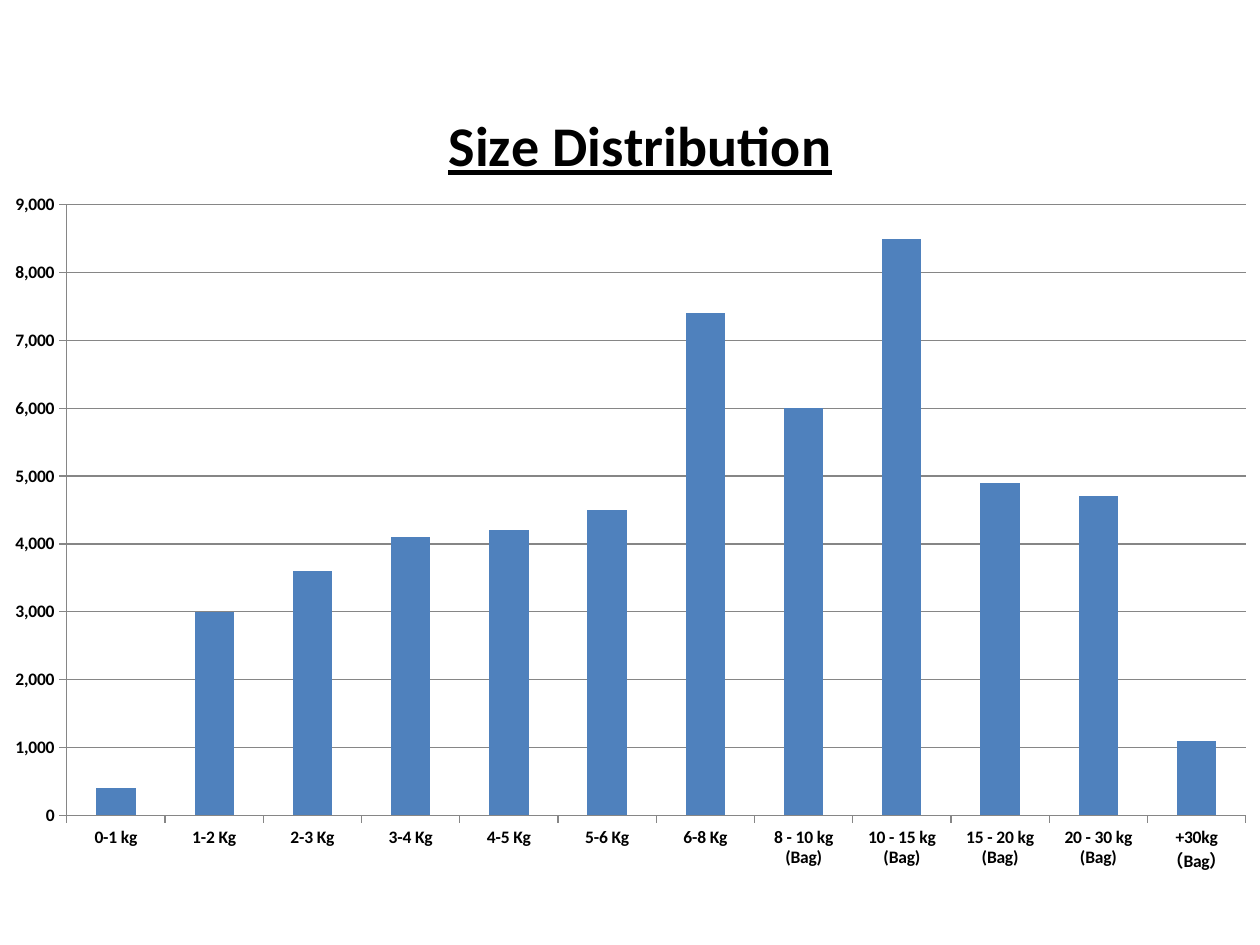
"""Build a slide with a column chart of the size distribution."""
import pptx
import pptx.chart.data
import pptx.dml.color
import pptx.enum.chart
import pptx.oxml
import pptx.oxml.ns
import pptx.util

Pt = pptx.util.Pt
COLORS = {name: pptx.dml.color.RGBColor.from_string(value) for name, value in
          {"text": "000000", "bar": "4F81BD", "line": "868686"}.items()}
NUMBER_FORMAT = '#,##0;"△ "#,##0'
SIZES = {
    "0-1 kg": 400,
    "1-2 Kg": 3000,
    "2-3 Kg": 3600,
    "3-4 Kg": 4100,
    "4-5 Kg": 4200,
    "5-6 Kg": 4500,
    "6-8 Kg": 7400,
    "8 - 10 kg (Bag)": 6000,
    "10 - 15 kg (Bag)": 8500,
    "15 - 20 kg (Bag)": 4900,
    "20 - 30 kg (Bag)": 4700,
    "+30kg（Bag）": 1100,
}


def make_layout(target, **fractions):
    """Return a manual chart layout with the given fractions of the chart."""
    inner = '<c:layoutTarget val="inner"/>' if target == "plot" else ""
    modes = "".join(f'<c:{key}Mode val="edge"/>' for key in ("x", "y"))
    places = "".join(f'<c:{key} val="{value}"/>' for key, value in fractions.items())
    return pptx.oxml.parse_xml(
        f'<c:layout {pptx.oxml.ns.nsdecls("c")}><c:manualLayout>'
        f"{inner}{modes}{places}</c:manualLayout></c:layout>")


deck = pptx.Presentation()
deck.slide_width, deck.slide_height = Pt(720), Pt(540)
page = deck.slides.add_slide(deck.slide_layouts[6])

data = pptx.chart.data.CategoryChartData(number_format=NUMBER_FORMAT)
data.categories = list(SIZES)
data.add_series("Series 1", list(SIZES.values()))
chart = page.shapes.add_chart(
    pptx.enum.chart.XL_CHART_TYPE.COLUMN_CLUSTERED,
    Pt(-5.76), Pt(30.96), Pt(732.24), Pt(478.08), data).chart
chart.has_legend = False
chart.font.name = "Calibri"
chart.font.size = Pt(10)
chart.font.color.rgb = COLORS["text"]

chart.has_title = True
title = chart.chart_title
title.include_in_layout = False
title.text_frame.text = "Size Distribution"
span = title.text_frame.paragraphs[0].runs[0]
span.font.name = "Calibri"
span.font.size = Pt(32)
span.font.bold = True
span.font.underline = True
span.font.color.rgb = COLORS["text"]

plot = chart.plots[0]
plot.gap_width = 150
plot.vary_by_categories = False
series = plot.series[0]
series.invert_if_negative = False
series.format.fill.solid()
series.format.fill.fore_color.rgb = COLORS["bar"]

for axis in (chart.category_axis, chart.value_axis):
    axis.major_tick_mark = pptx.enum.chart.XL_TICK_MARK.OUTSIDE
    axis.minor_tick_mark = pptx.enum.chart.XL_TICK_MARK.NONE
    axis.format.line.color.rgb = COLORS["line"]
    axis.format.line.width = Pt(0.75)
    axis.tick_labels.font.name = "Calibri"
    axis.tick_labels.font.size = Pt(10)
    axis.tick_labels.font.bold = True
    axis.tick_labels.font.color.rgb = COLORS["text"]

values = chart.value_axis
values.minimum_scale, values.maximum_scale, values.major_unit = 0, 9000, 1000
values.tick_labels.number_format = NUMBER_FORMAT
values.tick_labels.number_format_is_linked = False
values.has_major_gridlines = True
values.major_gridlines.format.line.color.rgb = COLORS["line"]
values.major_gridlines.format.line.width = Pt(0.75)

title_node = title._element
plot_node = chart._chartSpace.chart.plotArea
for node in (title_node, plot_node):
    for old in node.findall(pptx.oxml.ns.qn("c:layout")):
        node.remove(old)
title_node.find(pptx.oxml.ns.qn("c:tx")).addnext(make_layout("title", x=0.35, y=0.05))
plot_node.insert(0, make_layout("plot", x=0.06, y=0.18, w=0.92, h=0.73))

deck.save("out.pptx")
